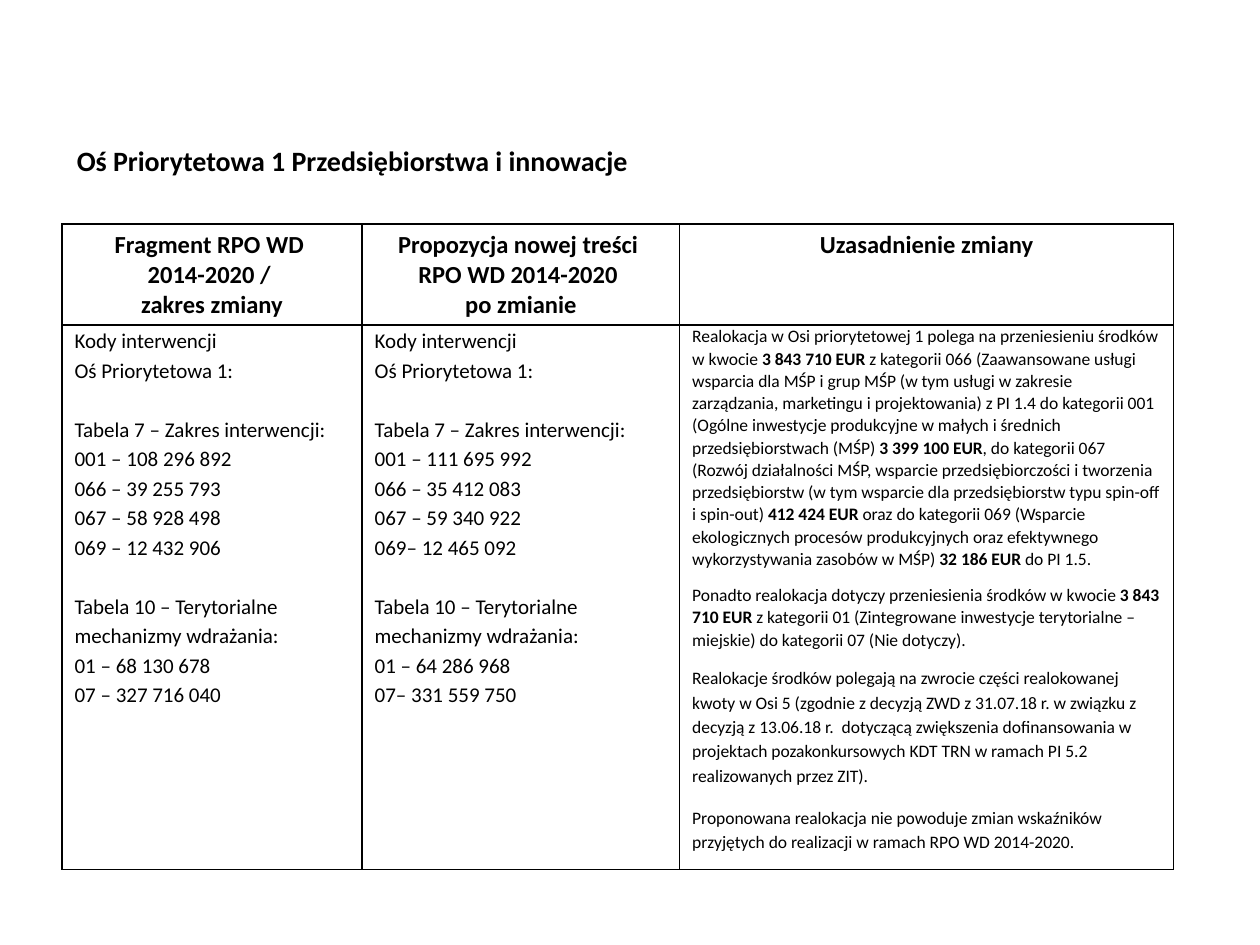
from dataclasses import dataclass

from lxml.etree import SubElement
from pptx import Presentation
from pptx.dml.color import RGBColor
from pptx.enum.text import PP_ALIGN
from pptx.oxml.ns import qn
from pptx.table import _Cell
from pptx.text.text import Font, TextFrame, _Paragraph
from pptx.util import Cm, Pt

BLACK = RGBColor(0x00, 0x00, 0x00)
FONT_NAME = "Calibri"
BORDER_WIDTH = Pt(1)
GROUP_GAP = 17

COLUMN_WIDTHS = (6.05, 6.4, 9.96)
ROW_HEIGHTS = (2.03, 10.97)

TITLE = "Oś Priorytetowa 1 Przedsiębiorstwa i innowacje"
HEADINGS = (
    "Fragment RPO WD \n2014-2020 / \nzakres zmiany",
    "Propozycja nowej treści \nRPO WD 2014-2020 \npo zmianie",
    "Uzasadnienie zmiany",
)


@dataclass
class TextLine:
    """A paragraph whose bold parts stand between pairs of asterisks."""

    text: str
    size: float = 12
    line_spacing: float = 1.15
    space_before: float = 0
    space_after: float = 0


def code_lines(intervention: tuple[str, ...], territorial: tuple[str, ...]) -> list[TextLine]:
    """List the intervention codes in three groups set apart by a gap."""
    groups = (
        ("Kody interwencji", "Oś Priorytetowa 1:"),
        ("Tabela 7 – Zakres interwencji:", *intervention),
        ("Tabela 10 – Terytorialne mechanizmy wdrażania:", *territorial),
    )
    return [
        TextLine(text, space_before=GROUP_GAP if group_index and not line_index else 0)
        for group_index, group in enumerate(groups)
        for line_index, text in enumerate(group)
    ]


CURRENT_CODES = code_lines(
    ("001 – 108 296 892", "066 – 39 255 793", "067 – 58 928 498", "069 – 12 432 906"),
    ("01 – 68 130 678", "07 – 327 716 040"),
)
PROPOSED_CODES = code_lines(
    ("001 – 111 695 992", "066 – 35 412 083", "067 – 59 340 922", "069– 12 465 092"),
    ("01 – 64 286 968", "07– 331 559 750"),
)
JUSTIFICATION = [
    TextLine(
        "Realokacja w Osi priorytetowej 1 polega na przeniesieniu środków w kwocie "
        "**3 843 710 EUR **z kategorii 066 (Zaawansowane usługi wsparcia dla MŚP i grup MŚP "
        "(w tym usługi w zakresie zarządzania, marketingu i projektowania) z PI 1.4 do "
        "kategorii 001 (Ogólne inwestycje produkcyjne w małych i średnich przedsiębiorstwach "
        "(MŚP) **3 399 100 EUR**, do kategorii 067 (Rozwój działalności MŚP, wsparcie "
        "przedsiębiorczości i tworzenia przedsiębiorstw (w tym wsparcie dla przedsiębiorstw "
        "typu spin-off i spin-out) **412 424 EUR **oraz do kategorii 069 (Wsparcie "
        "ekologicznych procesów produkcyjnych oraz efektywnego wykorzystywania zasobów w MŚP) "
        "**32 186 EUR** do PI 1.5.",
        size=10, line_spacing=1.05, space_after=8,
    ),
    TextLine(
        "Ponadto realokacja dotyczy przeniesienia środków w kwocie **3 843 710 EUR **"
        "z kategorii 01 (Zintegrowane inwestycje terytorialne – miejskie) do kategorii 07 "
        "(Nie dotyczy).",
        size=10, line_spacing=1.05, space_after=8,
    ),
    TextLine(
        "Realokacje środków polegają na zwrocie części realokowanej kwoty w Osi 5 (zgodnie "
        "z decyzją ZWD z 31.07.18 r. w związku z decyzją z 13.06.18 r.  dotyczącą zwiększenia "
        "dofinansowania w projektach pozakonkursowych KDT TRN w ramach PI 5.2 realizowanych "
        "przez ZIT).",
        size=10, space_after=10,
    ),
    TextLine(
        "Proponowana realokacja nie powoduje zmian wskaźników przyjętych do realizacji "
        "w ramach RPO WD 2014-2020.",
        size=10, space_after=10,
    ),
]


def style_font(font: Font, size: float, bold: bool) -> None:
    font.name = FONT_NAME
    font.size = Pt(size)
    font.bold = bold
    font.color.rgb = BLACK


def style_runs(para: _Paragraph, size: float, bold: bool) -> None:
    for span in para.runs:
        style_font(span.font, size, bold)


def write_lines(frame: TextFrame, lines: list[TextLine]) -> None:
    for index, line in enumerate(lines):
        para = frame.add_paragraph() if index else frame.paragraphs[0]
        para.line_spacing = line.line_spacing
        para.space_before = Pt(line.space_before)
        para.space_after = Pt(line.space_after)
        for part_index, part in enumerate(line.text.split("**")):
            span = para.add_run()
            span.text = part
            style_font(span.font, line.size, bold=part_index % 2 == 1)


def outline_cell(cell: _Cell) -> None:
    """Give the cell black borders on all sides and no fill."""
    properties = cell._tc.get_or_add_tcPr()
    for side in ("a:lnL", "a:lnR", "a:lnT", "a:lnB"):
        border = SubElement(properties, qn(side), w=str(BORDER_WIDTH))
        fill = SubElement(border, qn("a:solidFill"))
        SubElement(fill, qn("a:srgbClr"), val=str(BLACK))
    cell.fill.background()


def main() -> None:
    deck = Presentation()
    deck.slide_width = Cm(25.4)
    deck.slide_height = Cm(19.05)
    page = deck.slides.add_slide(deck.slide_layouts[6])

    title_box = page.shapes.add_textbox(Cm(1.3), Cm(2.77), Cm(22.4), Cm(1.55))
    title_box.text_frame.word_wrap = True
    title_box.text_frame.text = TITLE
    style_runs(title_box.text_frame.paragraphs[0], size=16, bold=True)

    table = page.shapes.add_table(
        len(ROW_HEIGHTS), len(COLUMN_WIDTHS),
        Cm(1.25), Cm(4.52), Cm(sum(COLUMN_WIDTHS)), Cm(sum(ROW_HEIGHTS)),
    ).table
    table.first_row = False
    table.horz_banding = False
    for column, width in zip(table.columns, COLUMN_WIDTHS):
        column.width = Cm(width)
    for row, height in zip(table.rows, ROW_HEIGHTS):
        row.height = Cm(height)
    for cell in table.iter_cells():
        outline_cell(cell)

    for index, heading in enumerate(HEADINGS):
        para = table.cell(0, index).text_frame.paragraphs[0]
        para.text = heading.replace("\n", "\v")
        para.alignment = PP_ALIGN.CENTER
        style_runs(para, size=14, bold=True)

    for index, lines in enumerate((CURRENT_CODES, PROPOSED_CODES, JUSTIFICATION)):
        cell = table.cell(1, index)
        cell.margin_top = cell.margin_bottom = Cm(0)
        write_lines(cell.text_frame, lines)

    deck.save("out.pptx")


if __name__ == "__main__":
    main()
